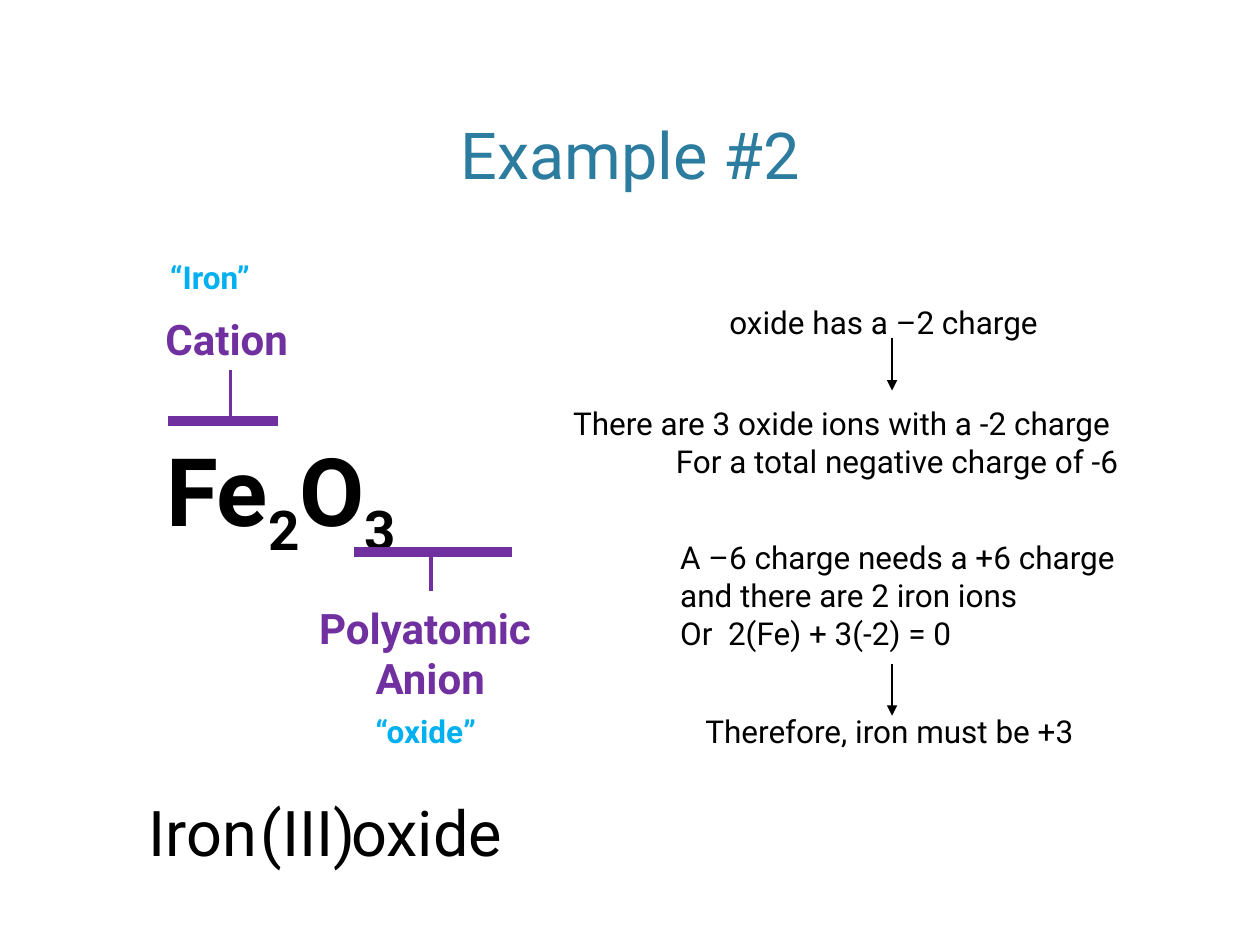
import pptx
import pptx.dml.color
import pptx.enum.shapes
import pptx.enum.text
import pptx.oxml.ns
import pptx.util
from lxml import etree

PX = 9144  # EMU per px, at 100 px to the inch
FONT = "Roboto"
BLACK = pptx.dml.color.RGBColor(0x00, 0x00, 0x00)
PURPLE = pptx.dml.color.RGBColor(0x70, 0x30, 0xA0)
CYAN = pptx.dml.color.RGBColor(0x00, 0xB0, 0xF0)
TEAL = pptx.dml.color.RGBColor(0x2C, 0x7C, 0x9F)
LEFT = pptx.enum.text.PP_ALIGN.LEFT
CENTER = pptx.enum.text.PP_ALIGN.CENTER
qn = pptx.oxml.ns.qn


def add_run(paragraph, text, size, color, bold=False):
    run = paragraph.add_run()
    run.text = text
    run.font.name = FONT
    run.font.size = pptx.util.Pt(size)
    run.font.color.rgb = color
    run.font.bold = bold
    return run


def add_text(box, lines, size, color, bold=False, wrap=False):
    """Add a text box; each line is (alignment, list of run texts)."""
    shape = slide.shapes.add_textbox(*[value * PX for value in box])
    frame = shape.text_frame
    frame.word_wrap = wrap
    frame.auto_size = pptx.enum.text.MSO_AUTO_SIZE.SHAPE_TO_FIT_TEXT
    for index, (alignment, texts) in enumerate(lines):
        paragraph = frame.add_paragraph() if index else frame.paragraphs[0]
        paragraph.alignment = alignment
        for text in texts:
            add_run(paragraph, text, size, color, bold)
    return frame


presentation = pptx.Presentation()
presentation.slide_width = 1000 * PX
presentation.slide_height = 750 * PX
slide = presentation.slides.add_slide(presentation.slide_layouts[5])

# Title
title = slide.shapes.title
title.left, title.top, title.width, title.height = 60 * PX, 12 * PX, 880 * PX, 146 * PX
title.text_frame.vertical_anchor = pptx.enum.text.MSO_ANCHOR.BOTTOM
title_paragraph = title.text_frame.paragraphs[0]
title_paragraph.alignment = CENTER
add_run(title_paragraph, "Example #2", 37, TEAL)

# Formula with subscript digits
formula = add_text((122, 338, 221, 101), [(LEFT, ["Fe", "2", "O", "3"])], 54, BLACK, True)
for run in formula.paragraphs[0].runs:
    if run.text.isdigit():
        run.font._element.set("baseline", "-25000")

# Ion labels
add_text((118, 244, 124, 50), [(CENTER, ["Cation"])], 24, PURPLE, True)
add_text((238, 473, 207, 90), [(CENTER, ["Polyatomic "]), (CENTER, ["Anion"])],
         24, PURPLE, True)
add_text((125, 200, 205, 40), [(LEFT, ["“Iron”"])], 18, CYAN, True, True)
add_text((288, 560, 192, 40), [(LEFT, ["“oxide”"])], 18, CYAN, True, True)

# Compound name, with a tab stop leaving room for the numeral
name = add_text((108, 625, 336, 71), [(LEFT, ["Iron\toxide"])], 36, BLACK, wrap=True)
tab_list = etree.SubElement(name.paragraphs[0]._p.get_or_add_pPr(), qn("a:tabLst"))
etree.SubElement(tab_list, qn("a:tab"), pos=str(161 * PX), algn="l")
add_text((197, 625, 95, 70), [(LEFT, ["(III)"])], 36, BLACK)

# Charge reasoning
add_text((569, 236, 279, 40), [(LEFT, ["oxide has a –2 charge"])], 18, BLACK)
add_text((445, 316, 534, 71),
         [(LEFT, ["There are 3 oxide ions with a -2 charge"]),
          (CENTER, ["For a total negative charge of -6"])], 18, BLACK, wrap=True)
add_text((530, 422, 400, 162),
         [(LEFT, ["A –6 charge needs a +6 charge and there are 2 iron ions"]),
          (LEFT, ["Or  2(Fe) + 3(-2) = 0"])], 18, BLACK, wrap=True)
add_text((550, 560, 315, 40), [(LEFT, ["Therefore, iron must be +3"])], 18, BLACK)

# Brackets beside the formula and arrows between the steps
connectors = [
    ((133, 334, 221, 334), PURPLE, 6, False),
    ((183, 330, 183, 294), PURPLE, 2, False),
    ((281, 438, 406, 438), PURPLE, 6, False),
    ((342, 469, 342, 434), PURPLE, 2, False),
    ((708, 268, 708, 310), BLACK, 1, True),
    ((708, 527, 708, 568), BLACK, 1, True),
]
for ends, color, width, has_arrow in connectors:
    connector = slide.shapes.add_connector(
        pptx.enum.shapes.MSO_CONNECTOR.STRAIGHT, *[value * PX for value in ends])
    connector.line.color.rgb = color
    connector.line.width = pptx.util.Pt(width)
    if has_arrow:
        etree.SubElement(connector.line._get_or_add_ln(), qn("a:tailEnd"), type="triangle")
    etree.SubElement(connector._element.spPr, qn("a:effectLst"))

presentation.save("out.pptx")
